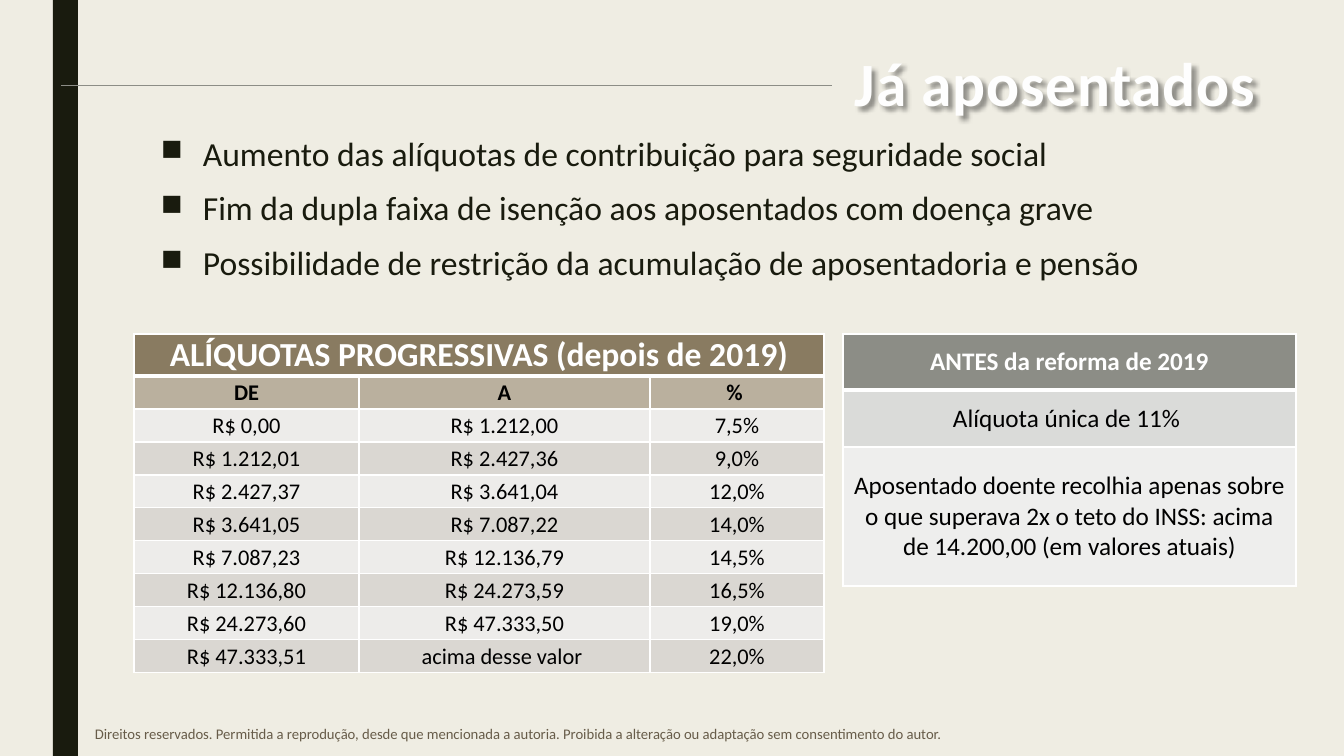
from dataclasses import dataclass
from typing import Any

import lxml.etree
import pptx
import pptx.dml.color
import pptx.enum.shapes
import pptx.enum.text
import pptx.oxml.ns
import pptx.util

PAGE_WIDTH, PAGE_HEIGHT = 1344, 756
EMU_PER_PX = 12192000 / PAGE_WIDTH
FONT = "Calibri"
DARK, WHITE, BLACK = "191B0E", "FFFFFF", "000000"
ALIGN = pptx.enum.text.PP_ALIGN
ANCHOR = pptx.enum.text.MSO_ANCHOR


@dataclass(frozen=True)
class Row:
    texts: tuple[str, ...]
    height: int
    fill: str
    size: float
    color: str = BLACK
    bold: bool = False
    anchor: Any = ANCHOR.MIDDLE


@dataclass(frozen=True)
class Grid:
    left: int
    top: int
    widths: tuple[int, ...]
    rows: tuple[Row, ...]
    margins: tuple[int, int, int, int]


RATES = (
    ("R$ 0,00", "R$ 1.212,00", "7,5%"),
    ("R$ 1.212,01", "R$ 2.427,36", "9,0%"),
    ("R$ 2.427,37", "R$ 3.641,04", "12,0%"),
    ("R$ 3.641,05", "R$ 7.087,22", "14,0%"),
    ("R$ 7.087,23", "R$ 12.136,79", "14,5%"),
    ("R$ 12.136,80", "R$ 24.273,59", "16,5%"),
    ("R$ 24.273,60", "R$ 47.333,50", "19,0%"),
    ("R$ 47.333,51", "acima desse valor ", "22,0%"),
)
BANDS = ("EDECEA", "DAD7D2")

BEFORE_REFORM = Grid(843, 334, (453,), (
    Row(("ANTES da reforma de 2019",), 56, "8C8D86", 18, WHITE, True),
    Row(("Alíquota única de 11% ",), 57, "DADBD9", 18),
    Row(("Aposentado doente recolhia apenas sobre o que superava 2x o teto "
         "do INSS: acima de 14.200,00 (em valores atuais)",), 139, "EEEEED", 18),
), (10, 5, 10, 5))

PROGRESSIVE_RATES = Grid(134, 334, (225, 291, 174), (
    Row(("ALÍQUOTAS PROGRESSIVAS (depois de 2019)",), 42, "897B61", 24, WHITE, True,
        ANCHOR.BOTTOM),
    Row(("DE", "A", "% "), 33, "BAB09E", 16, bold=True),
    *(Row(rate, 33, BANDS[index % 2], 16) for index, rate in enumerate(RATES)),
), (1, 1, 1, 0))

BULLETS = (
    "Aumento das alíquotas de contribuição para seguridade social",
    "Fim da dupla faixa de isenção aos aposentados com doença grave",
    "Possibilidade de restrição da acumulação de aposentadoria e pensão",
)


def px(length: float) -> pptx.util.Emu:
    return pptx.util.Emu(round(length * EMU_PER_PX))


def rgb(color: str) -> pptx.dml.color.RGBColor:
    return pptx.dml.color.RGBColor.from_string(color)


def add_node(parent: Any, tag: str, **attributes: Any) -> Any:
    values = {name: str(value) for name, value in attributes.items()}
    return lxml.etree.SubElement(parent, pptx.oxml.ns.qn(tag), values)


def add_solid_fill(parent: Any, color: str) -> None:
    add_node(add_node(parent, "a:solidFill"), "a:srgbClr", val=color)


def write(para: Any, text: str, *, size: float, color: str, bold: bool = False,
          align: Any = ALIGN.LEFT, line_spacing: float = 1.0,
          before: float = 0, after: float = 0) -> Any:
    """Add a formatted span to the paragraph and return it."""
    para.alignment = align
    para.line_spacing = line_spacing
    para.space_before = pptx.util.Pt(before)
    para.space_after = pptx.util.Pt(after)
    span = para.add_run()
    span.text = text
    span.font.name = FONT
    span.font.size = pptx.util.Pt(size)
    span.font.bold = bold
    span.font.color.rgb = rgb(color)
    return span


def add_box(page: Any, left: int, top: int, width: int, height: int, anchor: Any) -> Any:
    box = page.shapes.add_textbox(px(left), px(top), px(width), px(height))
    box.text_frame.word_wrap = True
    box.text_frame.vertical_anchor = anchor
    return box


def draw_title(page: Any) -> None:
    title = page.shapes.title
    title.left, title.top, title.width, title.height = px(208), px(49), px(1058), px(163)
    title.fill.background()
    title.line.fill.background()
    frame = title.text_frame
    frame.auto_size = pptx.enum.text.MSO_AUTO_SIZE.NONE
    frame.vertical_anchor = ANCHOR.TOP
    span = write(frame.paragraphs[0], "Já aposentados", size=44, color="FEFEFE",
                 bold=True, align=ALIGN.RIGHT, line_spacing=0.89)
    style = span.font._element
    style.set("spc", "50")
    outline = add_node(style, "a:ln", w=pptx.util.Pt(1.5))
    add_solid_fill(outline, "335366")
    style.insert(0, outline)
    effects = add_node(title._element.spPr, "a:effectLst")
    shadow = add_node(effects, "a:outerShdw", blurRad=px(3), dist=px(3), dir=2700000,
                      algn="tl", rotWithShape=0)
    shade = add_node(shadow, "a:srgbClr", val=BLACK)
    add_node(shade, "a:alpha", val=40000)


def draw_bullets(page: Any) -> None:
    frame = add_box(page, 151, 131, 1058, 190, ANCHOR.TOP).text_frame
    for index, text in enumerate(BULLETS):
        para = frame.add_paragraph() if index else frame.paragraphs[0]
        write(para, text, size=24, color=DARK, line_spacing=0.94, before=10, after=2)
        settings = para._p.get_or_add_pPr()
        settings.set("marL", str(px(42)))
        settings.set("indent", str(px(-42)))
        add_node(settings, "a:buSzPct", val=88000)
        add_node(settings, "a:buChar", char="■")


def draw_borders(cell: Any, row_index: int) -> None:
    """Draw white cell edges, thicker below the header row."""
    settings = cell._tc.get_or_add_tcPr()
    widths = {"L": 1, "R": 1, "T": 1, "B": 3 if row_index == 0 else 1}
    for side, width in widths.items():
        add_solid_fill(add_node(settings, f"a:ln{side}", w=pptx.util.Pt(width)), WHITE)


def draw_grid(page: Any, grid: Grid) -> None:
    height = sum(row.height for row in grid.rows)
    table = page.shapes.add_table(len(grid.rows), len(grid.widths), px(grid.left),
                                  px(grid.top), px(sum(grid.widths)), px(height)).table
    table.first_row = table.horz_banding = False
    for column, width in zip(table.columns, grid.widths):
        column.width = px(width)
    for row_index, row in enumerate(grid.rows):
        table.rows[row_index].height = px(row.height)
        if len(row.texts) < len(grid.widths):
            table.cell(row_index, 0).merge(table.cell(row_index, len(grid.widths) - 1))
        for column_index in range(len(grid.widths)):
            cell = table.cell(row_index, column_index)
            draw_borders(cell, row_index)
            cell.fill.solid()
            cell.fill.fore_color.rgb = rgb(row.fill)
            (cell.margin_left, cell.margin_top,
             cell.margin_right, cell.margin_bottom) = map(px, grid.margins)
            cell.vertical_anchor = row.anchor
            if column_index < len(row.texts):
                write(cell.text_frame.paragraphs[0], row.texts[column_index],
                      size=row.size, color=row.color, bold=row.bold, align=ALIGN.CENTER)


def draw_side_bar(page: Any) -> None:
    bar = page.shapes.add_shape(pptx.enum.shapes.MSO_SHAPE.RECTANGLE,
                                px(53), 0, px(25), px(PAGE_HEIGHT))
    bar.shadow.inherit = False
    bar.fill.solid()
    bar.fill.fore_color.rgb = rgb(DARK)
    bar.line.fill.background()


def draw_title_rule(page: Any) -> None:
    rule = page.shapes.add_connector(pptx.enum.shapes.MSO_CONNECTOR.STRAIGHT,
                                     px(61), px(85), px(832), px(85))
    rule.line.color.rgb = rgb("8C8D86")
    rule.line.width = pptx.util.Pt(0.5)
    add_node(rule._element.spPr, "a:effectLst")


def draw_rights_notice(page: Any) -> None:
    box = add_box(page, 85, 712, 926, 44, ANCHOR.MIDDLE)
    write(box.text_frame.paragraphs[0],
          "Direitos reservados. Permitida a reprodução, desde que mencionada a autoria. "
          "Proibida a alteração ou adaptação sem consentimento do autor.",
          size=10.5, color="675C49")


def main() -> None:
    deck = pptx.Presentation()
    deck.slide_width, deck.slide_height = px(PAGE_WIDTH), px(PAGE_HEIGHT)
    page = deck.slides.add_slide(deck.slide_layouts.get_by_name("Title Only"))
    page.background.fill.solid()
    page.background.fill.fore_color.rgb = rgb("EFEDE3")
    draw_side_bar(page)
    draw_title(page)
    draw_bullets(page)
    draw_title_rule(page)
    draw_rights_notice(page)
    for grid in (BEFORE_REFORM, PROGRESSIVE_RATES):
        draw_grid(page, grid)
    deck.save("out.pptx")


if __name__ == "__main__":
    main()
